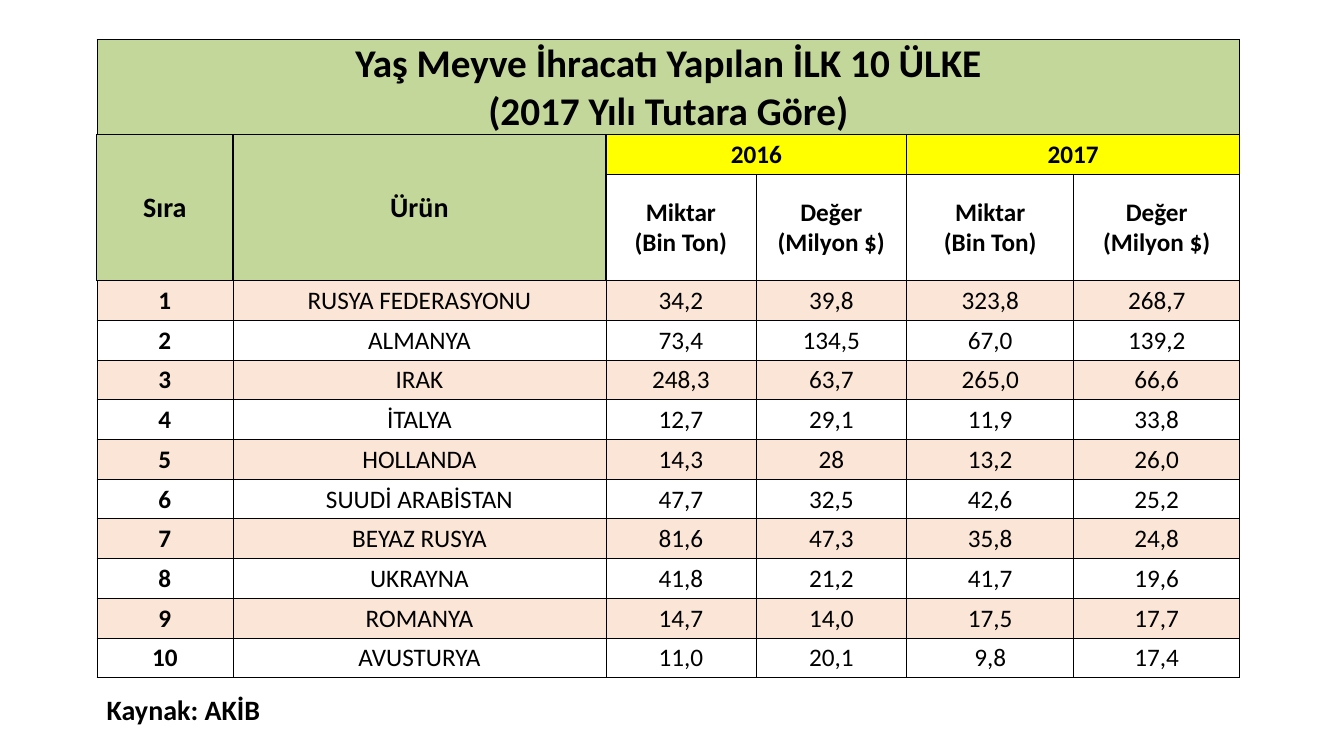
from lxml.etree import SubElement
from pptx import Presentation
from pptx.dml.color import RGBColor
from pptx.enum.text import MSO_ANCHOR as ANCHOR, PP_ALIGN as ALIGN
from pptx.oxml.ns import qn
from pptx.util import Cm, Pt

BLACK = RGBColor(0x00, 0x00, 0x00)
GREEN = RGBColor(0xC4, 0xD7, 0x9B)
YELLOW = RGBColor(0xFF, 0xFF, 0x00)
PEACH = RGBColor(0xFB, 0xE5, 0xD6)
FONT = "Calibri"

COL_WIDTHS = [3.43, 9.4, 3.78, 3.8, 4.21, 4.18]
HEADER_HEIGHTS = [2.39, 1, 2.68]
DATA_HEIGHT = 1
TITLE = "Yaş Meyve İhracatı Yapılan İLK 10 ÜLKE\v(2017 Yılı Tutara Göre)"
MEASURES = ["Miktar\v(Bin Ton)", "Değer\v(Milyon $)"]
COUNTRIES = [
    ("RUSYA FEDERASYONU", "34,2", "39,8", "323,8", "268,7"),
    ("ALMANYA", "73,4", "134,5", "67,0", "139,2"),
    ("IRAK", "248,3", "63,7", "265,0", "66,6"),
    ("İTALYA", "12,7", "29,1", "11,9", "33,8"),
    ("HOLLANDA", "14,3", "28", "13,2", "26,0"),
    ("SUUDİ ARABİSTAN", "47,7", "32,5", "42,6", "25,2"),
    ("BEYAZ RUSYA", "81,6", "47,3", "35,8", "24,8"),
    ("UKRAYNA", "41,8", "21,2", "41,7", "19,6"),
    ("ROMANYA", "14,7", "14,0", "17,5", "17,7"),
    ("AVUSTURYA", "11,0", "20,1", "9,8", "17,4"),
]


def format_runs(p, size, bold):
    for r in p.runs:
        r.font.name = FONT
        r.font.size = Pt(size)
        r.font.bold = bold
        r.font.color.rgb = BLACK


def set_borders(cell, side_width):
    tc_pr = cell._tc.get_or_add_tcPr()
    for tag, width in (("lnL", side_width), ("lnR", side_width), ("lnT", 0.5), ("lnB", 0.5)):
        line = SubElement(tc_pr, qn(f"a:{tag}"), w=str(Pt(width)))
        fill = SubElement(line, qn("a:solidFill"))
        SubElement(fill, qn("a:srgbClr"), val=str(BLACK))


def fill_cell(cell, text, size=18, bold=True, color=None):
    cell.text = text
    cell.vertical_anchor = ANCHOR.MIDDLE
    cell.margin_left = cell.margin_right = cell.margin_top = Cm(0.02)
    cell.margin_bottom = 0
    if color is None:
        cell.fill.background()
    else:
        cell.fill.solid()
        cell.fill.fore_color.rgb = color
    p = cell.text_frame.paragraphs[0]
    p.alignment = ALIGN.CENTER
    format_runs(p, size, bold)


def add_headers(table):
    table.cell(0, 0).merge(table.cell(0, 5))
    fill_cell(table.cell(0, 0), TITLE, 28, color=GREEN)
    for col, label in enumerate(["Sıra", "Ürün"]):
        table.cell(1, col).merge(table.cell(2, col))
        fill_cell(table.cell(1, col), label, 20, color=GREEN)
    for col, year in ((2, "2016"), (4, "2017")):
        table.cell(1, col).merge(table.cell(1, col + 1))
        fill_cell(table.cell(1, col), year, color=YELLOW)
        for i, measure in enumerate(MEASURES):
            fill_cell(table.cell(2, col + i), measure)


def add_export_table(s, left, top, width, height):
    rows = len(HEADER_HEIGHTS) + len(COUNTRIES)
    table = s.shapes.add_table(rows, len(COL_WIDTHS), left, top, width, height).table
    table.first_row = table.horz_banding = False
    for column, column_width in zip(table.columns, COL_WIDTHS):
        column.width = Cm(column_width)
    for row, row_height in zip(table.rows, HEADER_HEIGHTS + [DATA_HEIGHT] * len(COUNTRIES)):
        row.height = Cm(row_height)
    for row in range(rows):
        for col in range(len(COL_WIDTHS)):
            set_borders(table.cell(row, col), 1 if row in (1, 2) and col < 2 else 0.5)
    add_headers(table)
    for rank, values in enumerate(COUNTRIES, 1):
        color = PEACH if rank % 2 else None
        for col, text in enumerate((str(rank), *values)):
            cell = table.cell(len(HEADER_HEIGHTS) + rank - 1, col)
            fill_cell(cell, text, bold=col == 0, color=color)


def add_source(s, left, top, width, height):
    tf = s.shapes.add_textbox(left, top, width, height).text_frame
    tf.word_wrap = True
    tf.text = "Kaynak: AKİB"
    format_runs(tf.paragraphs[0], 20, True)


def main():
    prs = Presentation()
    prs.slide_width, prs.slide_height = Cm(33.87), Cm(19.05)
    s = prs.slides.add_slide(prs.slide_layouts[6])
    left = Cm(2.44)
    table_height = sum(HEADER_HEIGHTS) + DATA_HEIGHT * len(COUNTRIES)
    add_source(s, left, Cm(17.32), Cm(16.48), Cm(1.11))
    add_export_table(s, left, Cm(1), Cm(sum(COL_WIDTHS)), Cm(table_height))
    prs.save("out.pptx")


if __name__ == "__main__":
    main()
